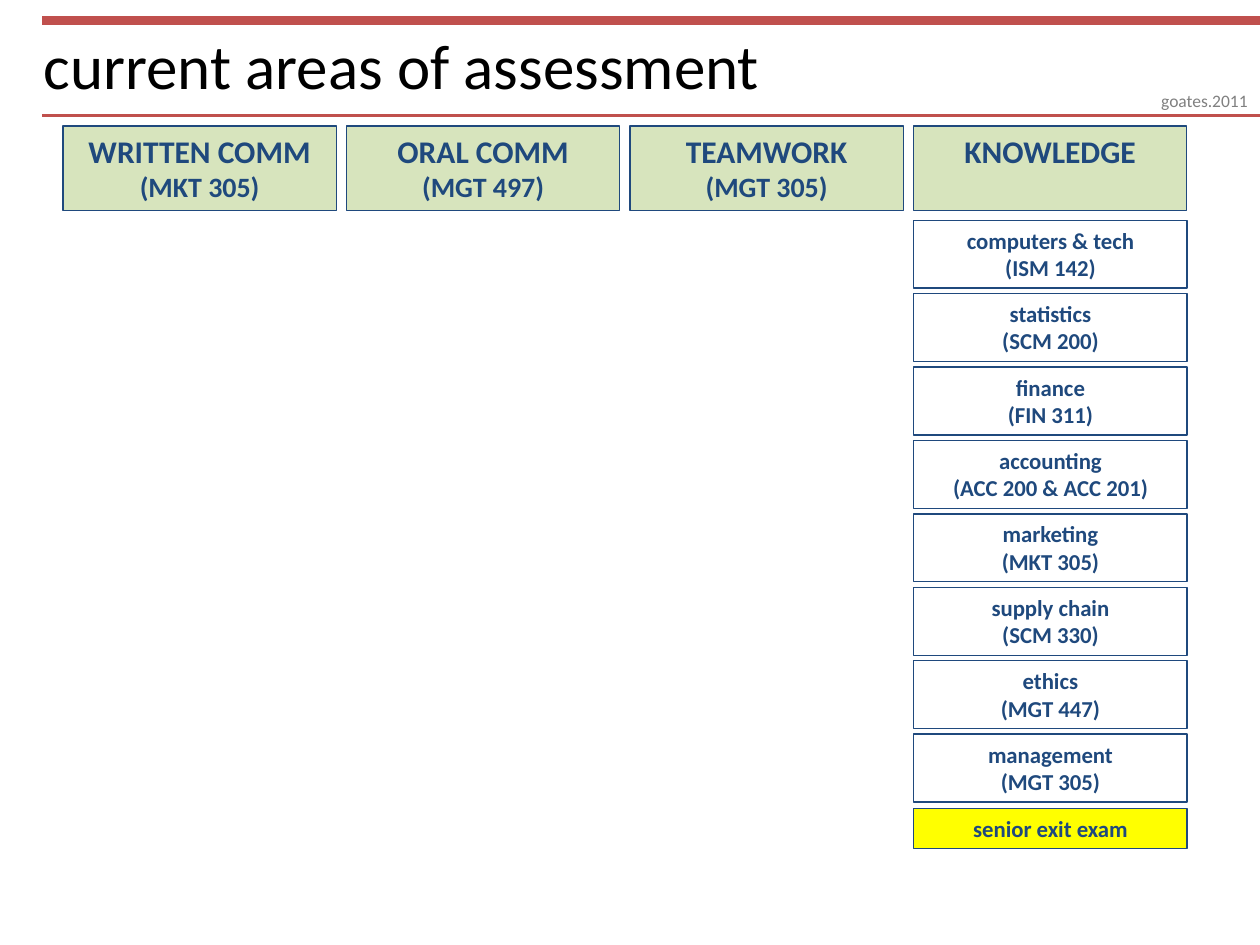
from lxml.etree import SubElement
from pptx import Presentation
from pptx.dml.color import RGBColor
from pptx.enum.shapes import MSO_CONNECTOR, MSO_SHAPE
from pptx.enum.text import MSO_ANCHOR, PP_ALIGN
from pptx.oxml.ns import qn
from pptx.util import Cm, Pt

NAVY = RGBColor(0x1F, 0x49, 0x7D)
GREEN = RGBColor(0xD7, 0xE4, 0xBD)
YELLOW = RGBColor(0xFF, 0xFF, 0x00)
RED = RGBColor(0xC0, 0x50, 0x4D)
GREY = RGBColor(0x80, 0x80, 0x80)
BLACK = RGBColor(0x00, 0x00, 0x00)


def write(shape, lines, sizes, color, align, bold=False):
    frame = shape.text_frame
    frame.word_wrap = True
    frame.vertical_anchor = MSO_ANCHOR.TOP
    frame.text = "\n".join(lines)
    for para, size in zip(frame.paragraphs, sizes):
        para.alignment = align
        for run in para.runs:
            run.font.name = "Calibri"
            run.font.size = Pt(size)
            run.font.bold = bold
            run.font.color.rgb = color


def add_box(left, top, height, lines, sizes, fill=None):
    box = slide.shapes.add_shape(
        MSO_SHAPE.RECTANGLE, Cm(left), Cm(top), Cm(5.51), Cm(height))
    box.shadow.inherit = False
    if fill is None:
        box.fill.background()
    else:
        box.fill.solid()
        box.fill.fore_color.rgb = fill
    box.line.color.rgb = NAVY
    box.line.width = Pt(0.75)
    write(box, lines, sizes, NAVY, PP_ALIGN.CENTER, True)


deck = Presentation()
deck.slide_width = Cm(25.4)
deck.slide_height = Cm(19.05)
slide = deck.slides.add_slide(deck.slide_layouts[6])

title = slide.shapes.add_textbox(Cm(0.63), Cm(0.42), Cm(24.13), Cm(1.8))
write(title, ["current areas of assessment"], [36], BLACK, PP_ALIGN.LEFT)

for top, width in [(0.42, 5), (2.33, 2)]:
    rule = slide.shapes.add_connector(
        MSO_CONNECTOR.STRAIGHT, Cm(0.85), Cm(top), Cm(25.4), Cm(top))
    rule.line.color.rgb = RED
    rule.line.width = Pt(width)
    SubElement(rule._element.spPr, qn("a:effectLst"))

credit = slide.shapes.add_textbox(Cm(22.65), Cm(1.69), Cm(2.75), Cm(0.68))
write(credit, ["goates.2011"], [10], GREY, PP_ALIGN.RIGHT)

heads = [
    ["WRITTEN COMM", "(MKT 305)"],
    ["ORAL COMM", "(MGT 497)"],
    ["TEAMWORK", "(MGT 305)"],
    ["KNOWLEDGE"],
]
for col, lines in enumerate(heads):
    add_box(1.27 + 5.715 * col, 2.54, 1.7, lines, [18, 16], GREEN)

topics = [
    ["computers & tech", "(ISM 142)"],
    ["statistics", "(SCM 200)"],
    ["finance", "(FIN 311)"],
    ["accounting", "(ACC 200 & ACC 201)"],
    ["marketing", "(MKT 305)"],
    ["supply chain", "(SCM 330)"],
    ["ethics", "(MGT 447)"],
    ["management", "(MGT 305)"],
]
for row, lines in enumerate(topics):
    add_box(18.42, 4.44 + 1.48 * row, 1.37, lines, [13, 13])
add_box(18.42, 4.46 + 1.48 * len(topics), 0.81, ["senior exit exam"], [13], YELLOW)

deck.save("out.pptx")
